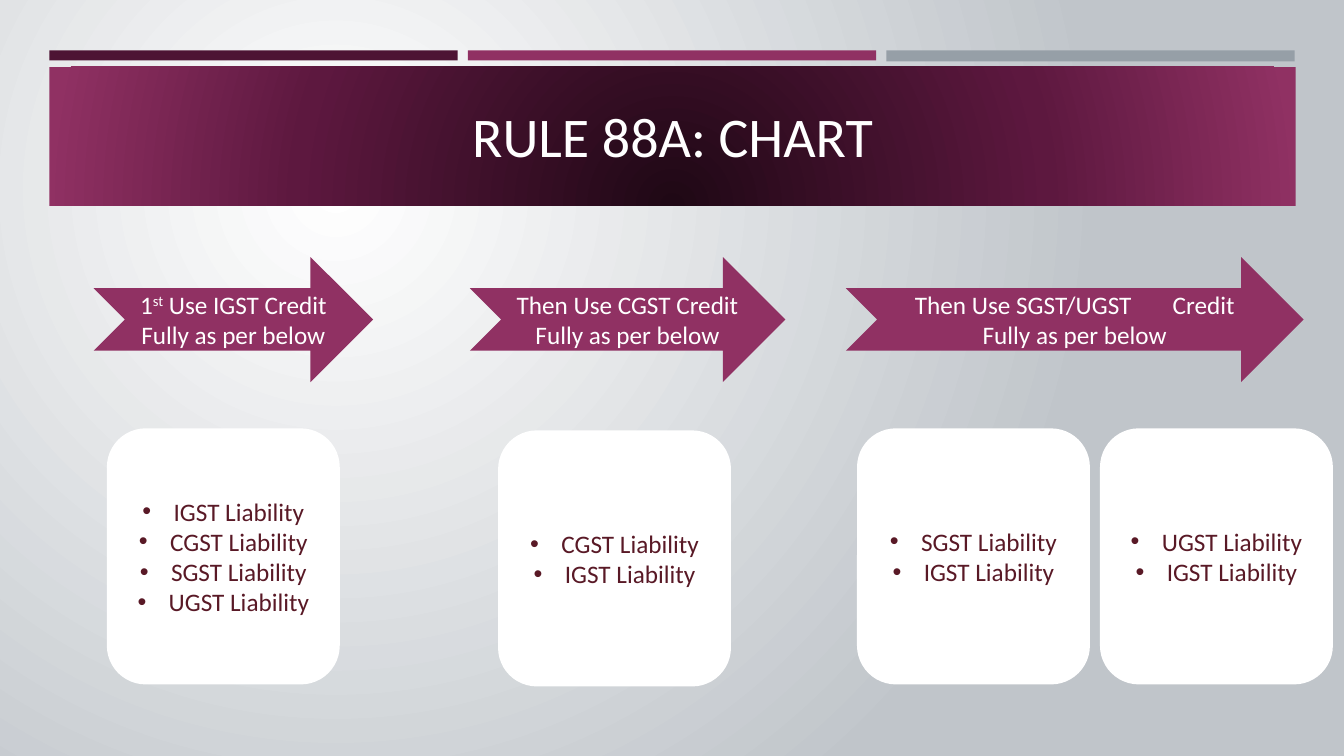
from dataclasses import dataclass

from lxml import etree
from pptx import Presentation
from pptx import dml
from pptx import util as u
from pptx.dml import color
from pptx.enum import shapes, text
from pptx.oxml import ns

COLORS = {
    "plum": "4D1434",
    "magenta": "903163",
    "slate": "969FA7",
    "white": "FFFFFF",
    "silver": "C0C5CA",
    "night": "1F0815",
    "wine": "5D183F",
    "maroon": "591926",
}
FONT = "Calibri"
ARROW_TOP, ARROW_HEIGHT = 2.55, 1.24
CARD_WIDTH, CARD_HEIGHT = 2.31, 2.54
BULLET_INDENT = u.Inches(0.31)


@dataclass
class Stripe:
    left: float
    color: str
    height: float = 0.1


@dataclass
class Step:
    left: float
    width: float
    lead: str
    ordinal: str = ""
    ending: str = ""


@dataclass
class Card:
    left: float
    top: float
    taxes: tuple[str, ...]


STRIPES = [Stripe(0.49, "plum"), Stripe(4.64, "magenta"), Stripe(8.79, "slate", 0.11)]
STEPS = [
    Step(0.93, 2.77, "1", "st", " Use IGST Credit"),
    Step(4.66, 3.13, "Then Use CGST Credit"),
    Step(8.39, 4.54, "Then Use SGST/UGST\t Credit"),
]
CARDS = [
    Card(1.06, 4.25, ("IGST", "CGST", "SGST", "UGST")),
    Card(4.94, 4.27, ("CGST", "IGST")),
    Card(8.5, 4.25, ("SGST", "IGST")),
    Card(10.91, 4.25, ("UGST", "IGST")),
]


def add_block(slide, kind, left: float, top: float, width: float, height: float, fill: str):
    block = slide.shapes.add_shape(kind, *map(u.Inches, (left, top, width, height)))
    block.shadow.inherit = False
    block.fill.solid()
    block.fill.fore_color.rgb = color.RGBColor.from_string(COLORS[fill])
    block.line.fill.background()
    return block


def set_radial_gradient(fill, element, stops: dict[int, str], focus: tuple[int, ...]) -> None:
    fill.gradient()
    gradient = next(element.iter(ns.qn("a:gradFill")))
    for child in list(gradient):
        gradient.remove(child)
    stop_list = etree.SubElement(gradient, ns.qn("a:gsLst"))
    for position, name in stops.items():
        stop = etree.SubElement(stop_list, ns.qn("a:gs"), pos=str(position * 1000))
        etree.SubElement(stop, ns.qn("a:srgbClr"), val=COLORS[name])
    shade = etree.SubElement(gradient, ns.qn("a:path"), path="circle")
    sides = {side: str(share * 1000) for side, share in zip("ltrb", focus)}
    etree.SubElement(shade, ns.qn("a:fillToRect"), sides)


def format_paragraph(paragraph, size: int, name: str) -> None:
    paragraph.alignment = text.PP_ALIGN.CENTER
    paragraph.font.size = u.Pt(size)
    paragraph.font.name = FONT
    paragraph.font.color.rgb = color.RGBColor.from_string(COLORS[name])


def add_title(slide) -> None:
    band = add_block(slide, shapes.MSO_SHAPE.RECTANGLE, 0.49, 0.66, 12.36, 1.38, "wine")
    set_radial_gradient(
        band.fill, band.element, {0: "night", 60: "wine", 100: "magenta"}, (50, 130, 50, -30)
    )
    title = slide.shapes.title
    title.left, title.top, title.width, title.height = map(u.Inches, (0.64, 0.8, 12.06, 1.08))
    title.text_frame.text = "RULE 88A: CHART"
    title.text_frame.auto_size = text.MSO_AUTO_SIZE.NONE
    title.text_frame.vertical_anchor = text.MSO_ANCHOR.MIDDLE
    format_paragraph(title.text_frame.paragraphs[0], 40, "white")
    band.element.addnext(title.element)


def add_step(slide, step: Step) -> None:
    arrow = add_block(
        slide, shapes.MSO_SHAPE.NOTCHED_RIGHT_ARROW,
        step.left, ARROW_TOP, step.width, ARROW_HEIGHT, "magenta",
    )
    credit = arrow.text_frame.paragraphs[0]
    credit.add_run().text = step.lead
    if step.ordinal:
        ordinal = credit.add_run()
        ordinal.text = step.ordinal
        ordinal.font.size = u.Pt(18)
        ordinal.font._element.set("baseline", "30000")
        credit.add_run().text = step.ending
    arrow.text_frame.add_paragraph().text = "Fully as per below"
    for paragraph in arrow.text_frame.paragraphs:
        format_paragraph(paragraph, 18, "white")


def add_card(slide, card: Card) -> None:
    box = add_block(
        slide, shapes.MSO_SHAPE.ROUNDED_RECTANGLE,
        card.left, card.top, CARD_WIDTH, CARD_HEIGHT, "white",
    )
    box.text_frame.text = "\n".join(f"{tax} Liability" for tax in card.taxes)
    for paragraph in box.text_frame.paragraphs:
        format_paragraph(paragraph, 18, "maroon")
        properties = paragraph._p.get_or_add_pPr()
        properties.set("marL", str(BULLET_INDENT))
        properties.set("indent", str(-BULLET_INDENT))
        bullet_font = etree.Element(ns.qn("a:buFont"), typeface="Arial")
        bullet = etree.Element(ns.qn("a:buChar"), char="•")
        properties.insert(0, bullet_font)
        bullet_font.addnext(bullet)


def main() -> None:
    deck = Presentation()
    deck.slide_width, deck.slide_height = u.Inches(13.33), u.Inches(7.5)
    slide = deck.slides.add_slide(deck.slide_layouts.get_by_name("Title Only"))
    set_radial_gradient(
        slide.background.fill, slide.element, {0: "white", 100: "silver"}, (50, 50, 100, 100)
    )
    for stripe in STRIPES:
        add_block(
            slide, shapes.MSO_SHAPE.RECTANGLE, stripe.left, 0.5, 4.05, stripe.height, stripe.color
        )
    add_title(slide)
    for step in STEPS:
        add_step(slide, step)
    for card in CARDS:
        add_card(slide, card)
    deck.save("out.pptx")


if __name__ == "__main__":
    main()
